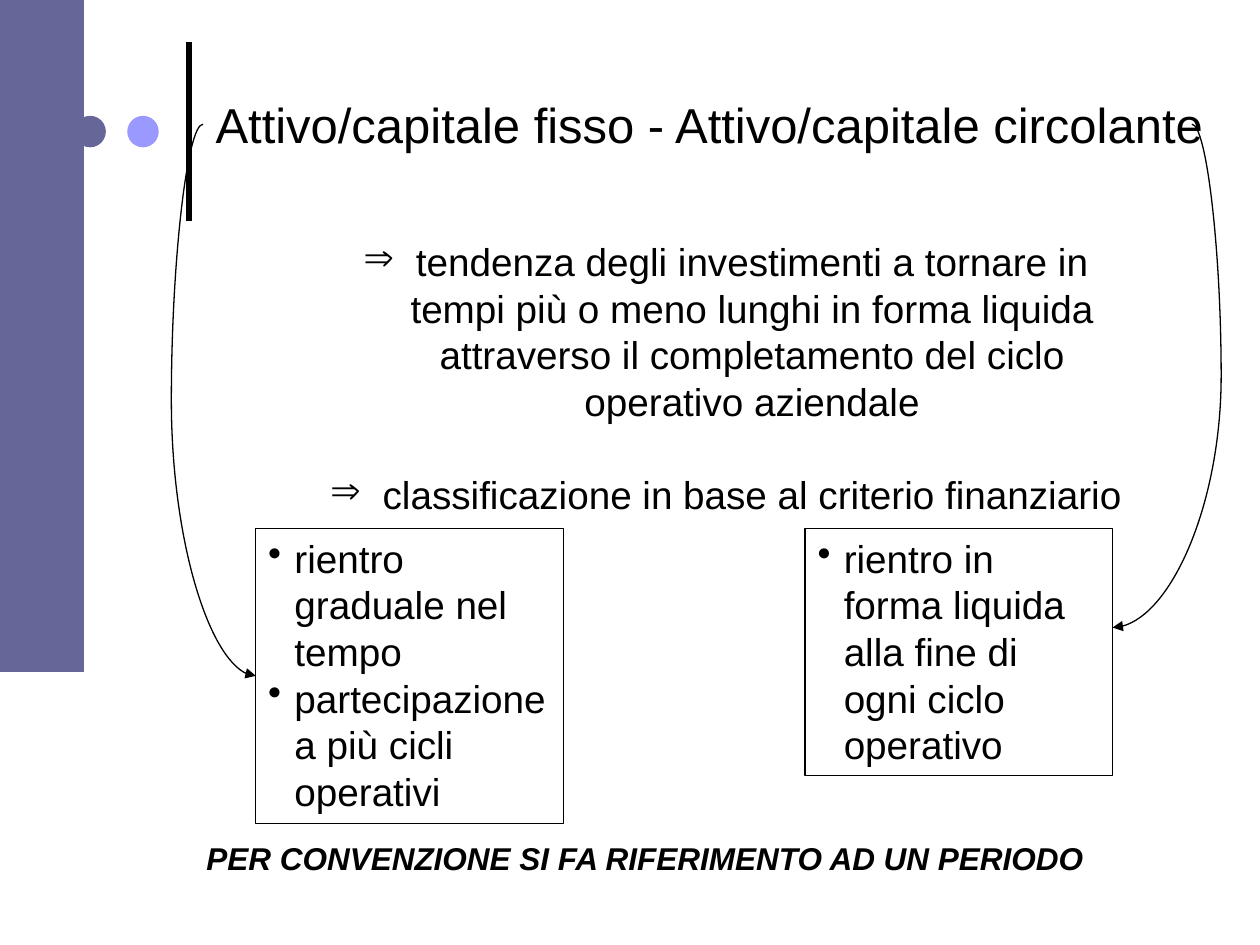
from dataclasses import dataclass

from lxml import etree
from pptx import Presentation
from pptx.dml.color import RGBColor
from pptx.enum.shapes import MSO_CONNECTOR, MSO_SHAPE
from pptx.enum.text import MSO_ANCHOR, PP_ALIGN
from pptx.oxml.ns import qn
from pptx.util import Pt

OVAL, RECTANGLE = MSO_SHAPE.OVAL, MSO_SHAPE.RECTANGLE
STRAIGHT, CURVE = MSO_CONNECTOR.STRAIGHT, MSO_CONNECTOR.CURVE
LEFT, CENTER = PP_ALIGN.LEFT, PP_ALIGN.CENTER
TOP, BOTTOM = MSO_ANCHOR.TOP, MSO_ANCHOR.BOTTOM

COLORS = {"ink": "000000", "slate": "666699", "lilac": "9999FF"}
FONT = "Arial"
BODY_SIZE = 22.1
BODY_PITCH = 26.6


@dataclass
class Area:
    left: float
    top: float
    width: float
    height: float

    def lengths(self) -> tuple:
        return Pt(self.left), Pt(self.top), Pt(self.width), Pt(self.height)


@dataclass
class Decoration:
    kind: int
    area: Area
    color: str


@dataclass
class BulletList:
    area: Area
    items: list
    bullet: str
    indent: float
    align: int = LEFT
    gap: float = 0
    framed: bool = False


@dataclass
class Link:
    kind: int
    start: tuple
    end: tuple
    weight: float = 0.75
    bend: float = 0
    arrow: bool = False


DECORATIONS = [
    Decoration(OVAL, Area(42.5, 66.2, 18, 18), "slate"),
    Decoration(OVAL, Area(72.7, 66.2, 18, 18), "lilac"),
    Decoration(RECTANGLE, Area(0, 0, 48, 384), "slate"),
]

LISTS = [
    BulletList(
        Area(171.4, 132.5, 486.7, 168.5),
        ["tendenza degli investimenti a tornare in tempi più o meno lunghi in forma "
         "liquida attraverso il completamento del ciclo operativo aziendale",
         "classificazione in base al criterio finanziario"],
        "⇒", 30, CENTER, gap=BODY_PITCH),
    BulletList(
        Area(146.2, 302, 175.7, 168.5),
        ["rientro graduale nel tempo", "partecipazione a più cicli operativi"],
        "•", 15, framed=True),
    BulletList(
        Area(460.1, 302, 175.7, 141.1),
        ["rientro in forma liquida alla fine di ogni ciclo operativo"],
        "•", 15, framed=True),
]

TITLE_RULE = Link(STRAIGHT, (108, 126), (108, 24), weight=3)
ARROWS = [
    Link(CURVE, (116, 71), (146.2, 386.2), bend=-0.6, arrow=True),
    Link(CURVE, (681.1, 71), (635.8, 358.6), bend=-0.37, arrow=True),
]


def rgb(name: str) -> RGBColor:
    return RGBColor.from_string(COLORS[name])


def add_span(para, text: str, size: float, strong: bool = False) -> None:
    span = para.add_run()
    span.text = text
    span.font.name = FONT
    span.font.size = Pt(size)
    span.font.bold = span.font.italic = strong
    span.font.color.rgb = rgb("ink")


def add_decoration(page, decoration: Decoration) -> None:
    shape = page.shapes.add_shape(decoration.kind, *decoration.area.lengths())
    shape.shadow.inherit = False
    shape.fill.solid()
    shape.fill.fore_color.rgb = rgb(decoration.color)
    shape.line.fill.background()


def set_bullet(para, bullet: str, indent: float) -> None:
    properties = para._p.get_or_add_pPr()
    properties.set("marL", str(Pt(indent)))
    properties.set("indent", str(-Pt(indent)))
    etree.SubElement(properties, qn("a:buChar")).set("char", bullet)


def add_list(page, listing: BulletList) -> None:
    box = page.shapes.add_textbox(*listing.area.lengths())
    if listing.framed:
        box.line.color.rgb = rgb("ink")
        box.line.width = Pt(0.75)
    frame = box.text_frame
    frame.word_wrap = True
    frame.vertical_anchor = TOP
    for index, item in enumerate(listing.items):
        para = frame.add_paragraph() if index else frame.paragraphs[0]
        para.alignment = listing.align
        para.line_spacing = Pt(BODY_PITCH)
        para.space_before = Pt(listing.gap if index else 0)
        set_bullet(para, listing.bullet, listing.indent)
        add_span(para, item, BODY_SIZE)


def add_link(page, link: Link) -> None:
    connector = page.shapes.add_connector(
        link.kind, *(Pt(value) for value in link.start + link.end))
    connector.line.color.rgb = rgb("ink")
    connector.line.width = Pt(link.weight)
    properties = connector._element.spPr
    if link.bend:
        geometry = properties.find(qn("a:prstGeom"))
        guides = geometry.find(qn("a:avLst"))
        if guides is None:
            guides = etree.SubElement(geometry, qn("a:avLst"))
        guide = etree.SubElement(guides, qn("a:gd"))
        guide.set("name", "adj1")
        guide.set("fmla", f"val {round(link.bend * 100000)}")
    if link.arrow:
        line = properties.find(qn("a:ln"))
        etree.SubElement(line, qn("a:tailEnd")).set("type", "triangle")
    etree.SubElement(properties, qn("a:effectLst"))


def add_title(page, area: Area, text: str) -> None:
    title = page.shapes.title
    title.left, title.top, title.width, title.height = area.lengths()
    frame = title.text_frame
    frame.word_wrap = False
    frame.vertical_anchor = BOTTOM
    para = frame.paragraphs[0]
    para.alignment = LEFT
    add_span(para, text, 28)


def add_note(page, area: Area, text: str) -> None:
    box = page.shapes.add_textbox(*area.lengths())
    box.text_frame.word_wrap = True
    add_span(box.text_frame.paragraphs[0], text, 18, strong=True)


def main() -> None:
    deck = Presentation()
    deck.slide_width, deck.slide_height = Pt(720), Pt(540)
    page = deck.slides.add_slide(deck.slide_layouts[5])
    add_link(page, TITLE_RULE)
    for decoration in DECORATIONS:
        add_decoration(page, decoration)
    add_title(page, Area(116, 50.4, 595.4, 41),
              "Attivo/capitale fisso - Attivo/capitale circolante")
    for listing in LISTS:
        add_list(page, listing)
    for arrow in ARROWS:
        add_link(page, arrow)
    add_note(page, Area(110.9, 476, 584, 28.8),
             "PER CONVENZIONE SI FA RIFERIMENTO AD UN PERIODO")
    deck.save("out.pptx")


if __name__ == "__main__":
    main()
